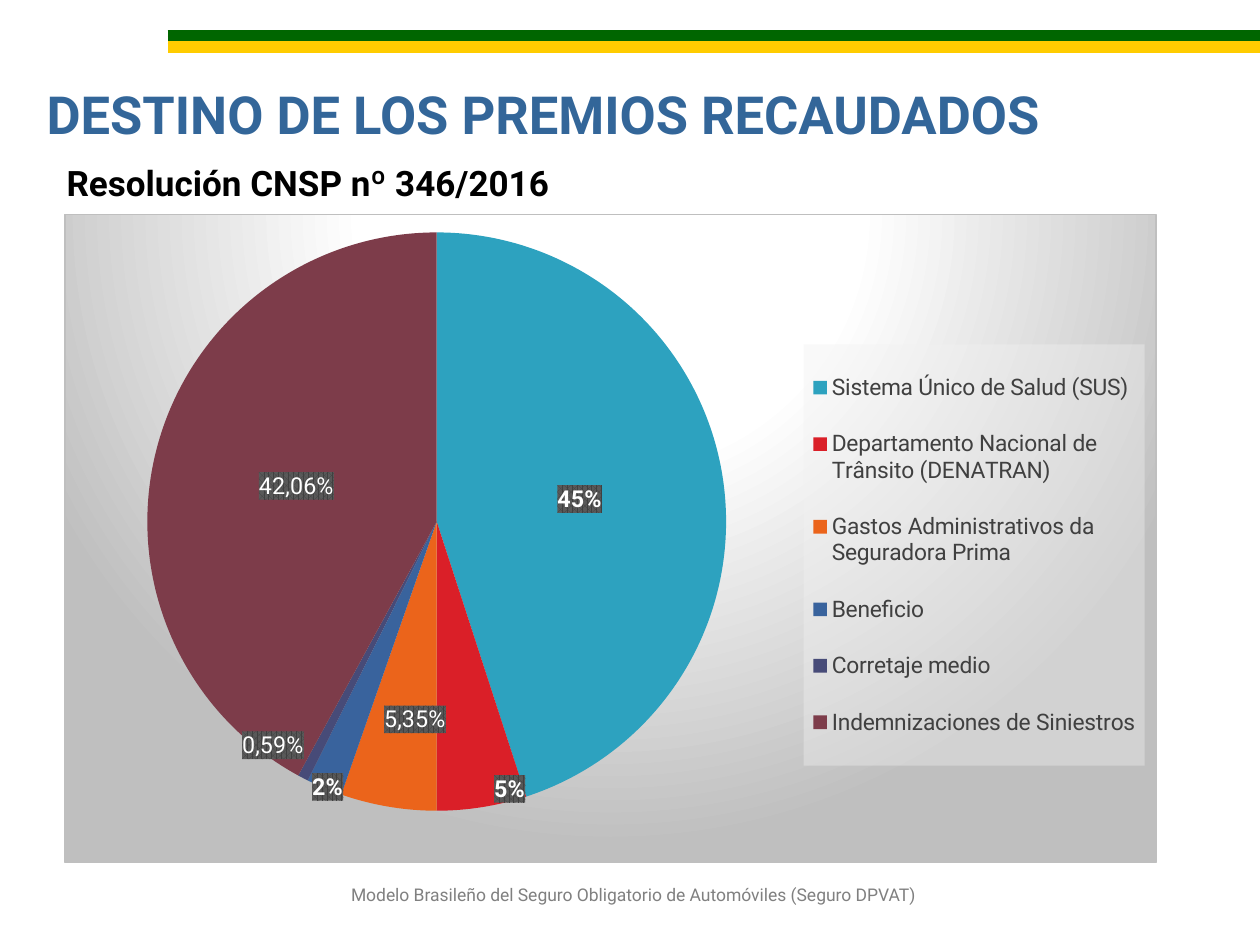
"""Build the slide on where the collected insurance premiums go."""
from dataclasses import dataclass
from typing import Any

from pptx import Presentation
from pptx import util as u
from pptx.chart.data import CategoryChartData
from pptx.dml.color import RGBColor
from pptx.enum import chart as ch
from pptx.enum import shapes, text
from pptx.oxml import parse_xml
from pptx.oxml.ns import nsdecls

FONT = "Roboto"
NS = nsdecls("c", "a")
CHART_WIDTH, CHART_HEIGHT = 8.67, 5.15
EDGES = '<c:xMode val="edge"/><c:yMode val="edge"/>'


@dataclass
class Stripe:
    y: float
    color: str


@dataclass
class Share:
    name: str
    value: float
    color: str
    shift: tuple[float, float] = (0, 0)
    caption: str = ""


STRIPES = [Stripe(0.33, "FFCC00"), Stripe(0.28, "006600"), Stripe(0.38, "FFCC00")]
SHARES = [
    Share("Sistema Único de Salud (SUS)", 45, "2DA2BF"),
    Share("Departamento Nacional de Trânsito (DENATRAN)", 5, "DA1F28", (0.4, 0.99)),
    Share("Gastos Administrativos da Seguradora Prima", 5.35, "EB641B", (0.02, 0.44), "5,35%"),
    Share("Beneficio", 2, "39639D", (-0.42, 1.05)),
    Share("Corretaje medio", 0.59, "474B78", (-0.77, 0.76), "0,59%"),
    Share("Indemnizaciones de Siniestros", 42.06, "7D3C4A", caption="42,06%"),
]


def rgb(color: str) -> RGBColor:
    return RGBColor.from_string(color)


def style_font(font: Any, size: float, color: str, bold: bool = False) -> None:
    for key, value in {"name": FONT, "size": u.Pt(size), "bold": bold}.items():
        setattr(font, key, value)
    font.color.rgb = rgb(color)


def place(shape: Any, left: float, top: float, width: float, height: float) -> None:
    box = {"left": left, "top": top, "width": width, "height": height}
    for key, value in box.items():
        setattr(shape, key, u.Inches(value))


def write(shape: Any, words: str, size: float, color: str, bold: bool = False,
          align: Any = text.PP_ALIGN.LEFT, after: float = 0) -> None:
    frame = shape.text_frame
    settings = {"word_wrap": True, "vertical_anchor": text.MSO_ANCHOR.TOP,
                "auto_size": text.MSO_AUTO_SIZE.SHAPE_TO_FIT_TEXT}
    for key, value in settings.items():
        setattr(frame, key, value)
    paragraph = frame.paragraphs[0]
    paragraph.alignment = align
    paragraph.space_after = u.Pt(after)
    run = paragraph.add_run()
    run.text = words
    style_font(run.font, size, color, bold)


def draw_stripe(slide: Any, stripe: Stripe) -> None:
    line = slide.shapes.add_connector(
        shapes.MSO_CONNECTOR.STRAIGHT, u.Inches(1.33), u.Inches(stripe.y),
        u.Inches(10), u.Inches(stripe.y))
    line.line.color.rgb = rgb(stripe.color)
    line.line.width = u.Pt(6)
    line._element.spPr.append(parse_xml(f"<a:effectLst {NS}/>"))


def manual_layout(modes: str = "", **inches: float) -> Any:
    whole = {"x": CHART_WIDTH, "w": CHART_WIDTH, "y": CHART_HEIGHT, "h": CHART_HEIGHT}
    parts = "".join(f'<c:{key} val="{value / whole[key]}"/>' for key, value in inches.items())
    return parse_xml(f"<c:layout {NS}><c:manualLayout>{modes}{parts}</c:manualLayout></c:layout>")


def replace_layout(parent: Any, layout: Any, before: str) -> None:
    for old in parent.findall(layout.tag):
        parent.remove(old)
    parent.xpath(before)[0].addprevious(layout)


def style_label(label: Any, share: Share) -> None:
    if share.caption:
        run = label.text_frame.paragraphs[0].add_run()
        run.text = share.caption
        style_font(run.font, 13.3, "FFFFFF")
    else:
        style_font(label.font, 13.3, "FFFFFF", True)
    label.position = ch.XL_LABEL_POSITION.CENTER


def finish_label(label: Any, share: Share) -> None:
    if any(share.shift):
        x, y = share.shift
        label.xpath("c:idx")[0].addnext(manual_layout(x=x, y=y))
    pattern = "0.00%" if share.caption else "0%"
    anchor = label.xpath("c:txPr | c:dLblPos")[0]
    anchor.addprevious(parse_xml(f'<c:numFmt {NS} formatCode="{pattern}" sourceLinked="0"/>'))
    anchor.addprevious(parse_xml(
        f'<c:spPr {NS}><a:pattFill prst="pct75"><a:fgClr><a:srgbClr val="404040"/></a:fgClr>'
        '<a:bgClr><a:srgbClr val="595959"/></a:bgClr></a:pattFill></c:spPr>'))
    label.xpath("c:showVal")[0].set("val", "0")
    label.xpath("c:showPercent")[0].set("val", "1")


def style_background(chart: Any) -> None:
    stops = "".join(f'<a:gs pos="{pos}"><a:srgbClr val="{color}"/></a:gs>' for pos, color in
                    ((0, "FFFFFF"), (39000, "FFFFFF"), (100000, "BFBFBF")))
    chart.element.xpath("c:chart")[0].addnext(parse_xml(
        f'<c:spPr {NS}><a:gradFill><a:gsLst>{stops}</a:gsLst><a:path path="circle">'
        '<a:fillToRect l="50000" t="-80000" r="50000" b="180000"/></a:path></a:gradFill>'
        '<a:ln w="9525"><a:solidFill><a:srgbClr val="BFBFBF"/></a:solidFill></a:ln></c:spPr>'))


def style_legend(chart: Any) -> None:
    chart.has_legend = True
    chart.legend.position = ch.XL_LEGEND_POSITION.RIGHT
    chart.legend.include_in_layout = False
    style_font(chart.legend.font, 13, "404040")
    legend = chart.element.xpath(".//c:legend")[0]
    replace_layout(legend, manual_layout(EDGES, x=5.87, y=1.03, w=2.71, h=3.35), "c:overlay")
    legend.xpath("c:txPr")[0].addprevious(parse_xml(
        f'<c:spPr {NS}><a:solidFill><a:srgbClr val="F2F2F2"><a:alpha val="39000"/>'
        '</a:srgbClr></a:solidFill></c:spPr>'))


def place_plot(chart: Any) -> None:
    inner = f'<c:layoutTarget val="inner"/>{EDGES}'
    plot_area = chart.element.xpath(".//c:plotArea")[0]
    replace_layout(plot_area, manual_layout(inner, x=0.65, y=0.14, w=4.61, h=4.6), "c:pieChart")


def draw_pie(slide: Any) -> None:
    data = CategoryChartData(number_format="0.00")
    data.categories = [share.name for share in SHARES]
    data.add_series("Series 1", [share.value for share in SHARES])
    box = [u.Inches(value) for value in (0.51, 1.7, CHART_WIDTH, CHART_HEIGHT)]
    chart = slide.shapes.add_chart(ch.XL_CHART_TYPE.PIE, *box, data).chart
    chart.has_title = False
    style_font(chart.font, 10, "000000")
    style_background(chart)
    style_legend(chart)
    place_plot(chart)
    plot = chart.plots[0]
    plot.vary_by_categories = True
    for index, share in enumerate(SHARES):
        point = plot.series[0].points[index]
        point.format.fill.solid()
        point.format.fill.fore_color.rgb = rgb(share.color)
        point.format.line.fill.background()
        style_label(point.data_label, share)
    labels = plot.series[0].data_labels
    settings = {"number_format": "0.00%", "number_format_is_linked": False,
                "show_value": False, "show_percentage": True}
    for key, value in settings.items():
        setattr(labels, key, value)
    style_font(labels.font, 13.3, "FFFFFF", True)
    for label, share in zip(chart.element.xpath(".//c:ser//c:dLbl"), SHARES):
        finish_label(label, share)


def main() -> None:
    deck = Presentation()
    deck.slide_width, deck.slide_height = u.Inches(10), u.Inches(7.5)
    slide = deck.slides.add_slide(deck.slide_layouts[5])
    for stripe in STRIPES:
        draw_stripe(slide, stripe)
    title = slide.shapes.title
    place(title, 0.27, 0.6, 9.53, 0.61)
    write(title, "DESTINO DE LOS PREMIOS RECAUDADOS", 30, "336699", True)
    draw_pie(slide)
    resolution = slide.shapes.add_textbox(0, 0, 0, 0)
    place(resolution, 0.43, 1.23, 9.65, 0.44)
    write(resolution, "Resolución CNSP nº 346/2016", 20, "000000", True, after=6)
    footer = slide.shapes.add_textbox(0, 0, 0, 0)
    place(footer, 0.46, 6.97, 9.13, 0.27)
    write(footer, "Modelo Brasileño del Seguro Obligatorio de Automóviles (Seguro DPVAT)",
          10, "808080", align=text.PP_ALIGN.CENTER)
    deck.save("out.pptx")


if __name__ == "__main__":
    main()
